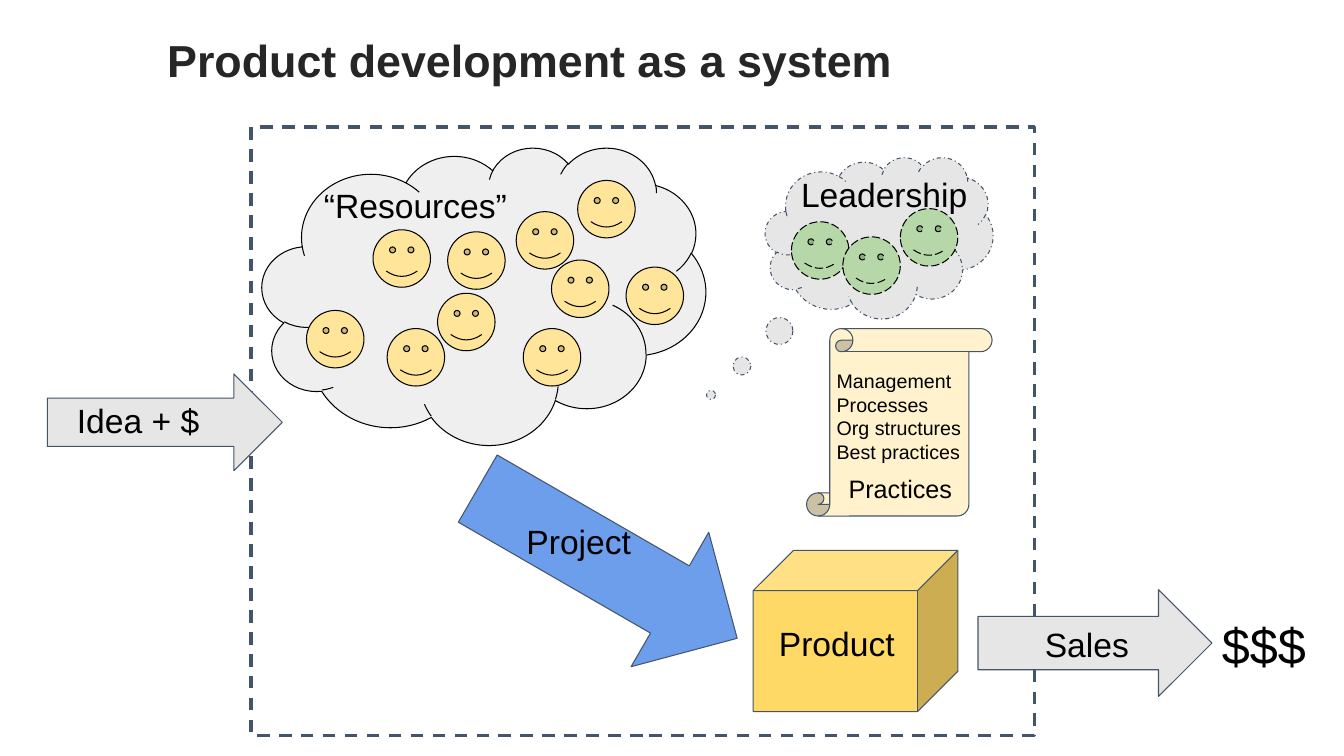
from pptx import Presentation
from pptx.dml.color import RGBColor
from pptx.enum.dml import MSO_LINE
from pptx.enum.shapes import MSO_SHAPE
from pptx.enum.text import MSO_ANCHOR, PP_ALIGN
from pptx.util import Emu, Pt

PX = 9144  # 100 px to the inch
FONT = "Arial"
LEFT, CENTER = PP_ALIGN.LEFT, PP_ALIGN.CENTER
TOP, MIDDLE = MSO_ANCHOR.TOP, MSO_ANCHOR.MIDDLE
DASH, DASH_DOT, LONG_DASH = MSO_LINE.DASH, MSO_LINE.DASH_DOT, MSO_LINE.LONG_DASH
RECTANGLE, CLOUD, CALLOUT = MSO_SHAPE.RECTANGLE, MSO_SHAPE.CLOUD, MSO_SHAPE.CLOUD_CALLOUT
SMILEY, CUBE = MSO_SHAPE.SMILEY_FACE, MSO_SHAPE.CUBE
ARROW, SCROLL = MSO_SHAPE.RIGHT_ARROW, MSO_SHAPE.VERTICAL_SCROLL

BLACK = RGBColor(0x00, 0x00, 0x00)
INK = RGBColor(0x26, 0x26, 0x26)
SLATE = RGBColor(0x44, 0x54, 0x6A)
PALE_GRAY = RGBColor(0xEF, 0xEF, 0xEF)
GRAY = RGBColor(0xE7, 0xE6, 0xE6)
YELLOW = RGBColor(0xFF, 0xE5, 0x99)
GOLD = RGBColor(0xFF, 0xD9, 0x66)
CREAM = RGBColor(0xFF, 0xF2, 0xCC)
GREEN = RGBColor(0xB6, 0xD7, 0xA8)
BLUE = RGBColor(0x6D, 0x9E, 0xEB)

FACE_SIZE = 57


def px(*lengths):
    return [Emu(length * PX) for length in lengths]


def add_figure(parent, kind, box, fill=None, line=SLATE, weight=0.75, dash=None):
    figure = parent.shapes.add_shape(kind, *px(*box))
    figure.shadow.inherit = False
    if fill is None:
        figure.fill.background()
    else:
        figure.fill.solid()
        figure.fill.fore_color.rgb = fill
    figure.line.color.rgb = line
    figure.line.width = Pt(weight)
    if dash is not None:
        figure.line.dash_style = dash
    return figure


def add_text(parent, box, lines, size=24, align=CENTER, color=BLACK,
             bold=False, anchor=TOP, inset=10):
    frame = parent.shapes.add_textbox(*px(*box)).text_frame
    frame.word_wrap = True
    frame.vertical_anchor = anchor
    frame.margin_left, frame.margin_right = px(10, 10)
    frame.margin_top, frame.margin_bottom = px(inset, inset)
    for index, line in enumerate(lines):
        para = frame.paragraphs[0] if index == 0 else frame.add_paragraph()
        para.text = line
        para.alignment = align
        para.font.name = FONT
        para.font.size = Pt(size)
        para.font.bold = bold
        para.font.color.rgb = color
    return frame


def add_faces(parent, left, top, spots, fill, dash=None):
    for x, y in spots:
        add_figure(parent, SMILEY, (left + x, top + y, FACE_SIZE, FACE_SIZE),
                   fill, BLACK, dash=dash)


def add_title(page, box):
    frame = add_text(page, box, ["Product development as a system"], 32, LEFT,
                     INK, True, MIDDLE, 5)
    frame.paragraphs[0].line_spacing = 0.9


def add_resources(page, box):
    group = page.shapes.add_group_shape()
    left, top = box[:2]
    add_figure(group, CLOUD, box, PALE_GRAY, BLACK)
    spots = [(110, 82), (174, 145), (184, 84), (287, 112), (259, 180),
             (124, 180), (313, 33), (252, 64), (44, 162), (361, 119)]
    add_faces(group, left, top, spots, YELLOW)
    add_text(group, (left + 44, top + 27, 216, 72), ["“Resources”"])


def add_product(page, box):
    group = page.shapes.add_group_shape()
    left, top = box[:2]
    add_figure(group, CUBE, box, GOLD)
    add_text(group, (left, top + 62, 166, 78), ["Product"])


def add_arrow(page, box, fill, label, label_box, rotation=0):
    """The label box is given relative to the corner of the arrow."""
    group = page.shapes.add_group_shape()
    left, top = box[:2]
    add_figure(group, ARROW, box, fill).rotation = rotation
    x, y, width, height = label_box
    add_text(group, (left + x, top + y, width, height), [label])
    return group


def add_sales(page, box):
    left, top, width = box[:3]
    group = add_arrow(page, box, GRAY, "Sales", (0, 24, 216, 59))
    add_text(group, (left + width, top + 14, 108, 78), ["$$$"], 36, LEFT)


def add_leadership(page, box):
    group = page.shapes.add_group_shape()
    left, top = box[:2]
    callout = add_figure(group, CALLOUT, box, GRAY, dash=DASH_DOT)
    callout.adjustments[0] = -0.738
    callout.adjustments[1] = 0.974
    add_text(group, (left + 10, top + 7, 216, 72), ["Leadership"])
    add_faces(group, left, top, [(26, 64), (134, 51), (77, 79)], GREEN, LONG_DASH)


def add_practices(page, box):
    group = page.shapes.add_group_shape()
    left, top = box[:2]
    add_figure(group, SCROLL, box, CREAM)
    lines = ["Management", "Processes", "Org structures", "Best practices", "Practices"]
    frame = add_text(group, (left + 20, top + 30, 146, 126), lines, 14, LEFT)
    caption = frame.paragraphs[-1]
    caption.alignment = CENTER
    caption.font.size = Pt(18)
    caption.space_before = Pt(7)


def main():
    deck = Presentation()
    deck.slide_width, deck.slide_height = px(1333, 750)
    page = deck.slides.add_slide(deck.slide_layouts[6])

    add_title(page, (156, 0, 1154, 126))
    # Boundary of the system
    add_figure(page, RECTANGLE, (249, 126, 777, 604), weight=2.25, dash=DASH)
    # People and outcome
    add_resources(page, (260, 146, 440, 295))
    add_product(page, (747, 546, 203, 160))
    # Flow through the system
    add_sales(page, (970, 585, 232, 106))
    add_arrow(page, (454, 482, 297, 154), BLUE, "Project", (38, 25, 164, 78), 30)
    add_arrow(page, (47, 371, 233, 96), GRAY, "Idea + $", (0, 16, 180, 70))
    # Guidance
    add_leadership(page, (759, 156, 226, 160))
    add_practices(page, (800, 326, 184, 186))

    deck.save("out.pptx")


if __name__ == "__main__":
    main()
